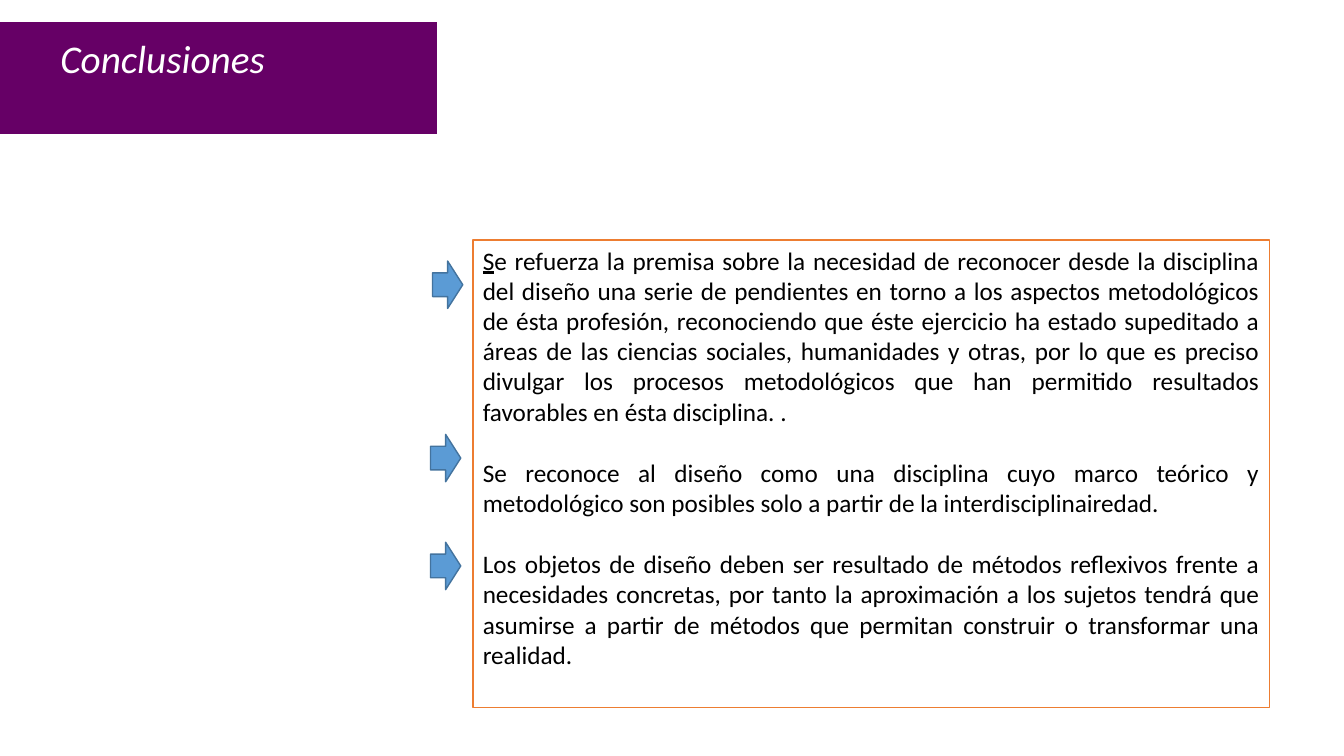
from pptx import Presentation
from pptx.dml.color import RGBColor
from pptx.enum.shapes import MSO_SHAPE
from pptx.enum.text import MSO_ANCHOR, PP_ALIGN
from pptx.util import Inches, Pt

COLORS = {
    "band": "660066", "white": "FFFFFF", "text": "000000",
    "frame": "ED7D31", "arrow": "5B9BD5", "edge": "43739E",
}
POINTS = [
    "Se refuerza la premisa sobre la necesidad de reconocer desde la disciplina del diseño una serie de pendientes en torno a los aspectos metodológicos de ésta profesión, reconociendo que éste ejercicio ha estado supeditado a áreas de las ciencias sociales, humanidades y otras, por lo que es preciso divulgar los procesos metodológicos que han permitido resultados favorables en ésta disciplina. .",
    "Se reconoce al diseño como una disciplina cuyo marco teórico y metodológico son posibles solo a partir de la interdisciplinairedad.",
    "Los objetos de diseño deben ser resultado de métodos reflexivos frente a necesidades concretas, por tanto la aproximación a los sujetos tendrá que asumirse a partir de métodos que permitan construir o transformar una realidad.",
]
ARROWS = [(-0.4, 0.21), (-0.42, 1.93), (-0.42, 3.0)]


def color(name):
    return RGBColor.from_string(COLORS[name])


def add_box(slide, kind, box, fill, line=None):
    shape = slide.shapes.add_shape(kind, *map(Inches, box))
    shape.shadow.inherit = False
    shape.fill.solid()
    shape.fill.fore_color.rgb = color(fill)
    if line:
        shape.line.color.rgb = color(line)
        shape.line.width = Pt(1)
    else:
        shape.line.fill.background()
    return shape


def set_font(para, size, ink):
    para.alignment = PP_ALIGN.JUSTIFY
    para.font.name = "Calibri"
    para.font.size = Pt(size)
    para.font.color.rgb = color(ink)


def add_title(slide, box, text):
    left, top, width, height = box
    add_box(slide, MSO_SHAPE.FLOWCHART_PROCESS, box, "band")
    label = slide.shapes.add_textbox(
        Inches(left + 0.5), Inches(top + 0.12), Inches(width - 1), Inches(0.53))
    frame = label.text_frame
    frame.word_wrap = True
    frame.vertical_anchor = MSO_ANCHOR.MIDDLE
    para = frame.paragraphs[0]
    para.text = text
    set_font(para, 28, "white")
    para.font.italic = True
    para.line_spacing = 0.9


def add_points(slide, box, points):
    left, top = box[:2]
    panel = add_box(slide, MSO_SHAPE.RECTANGLE, box, "white", "frame")
    frame = panel.text_frame
    frame.word_wrap = True
    frame.vertical_anchor = MSO_ANCHOR.TOP
    for index, text in enumerate(points):
        para = frame.add_paragraph() if index else frame.paragraphs[0]
        set_font(para, 18, "text")
        if index:
            para.space_before = Pt(22)
            para.add_run().text = text
        else:
            first = para.add_run()
            first.text = text[0]
            first.font.underline = True
            para.add_run().text = text[1:]
    for across, down in ARROWS:
        spot = (left + across, top + down, 0.3, 0.47)
        add_box(slide, MSO_SHAPE.RIGHT_ARROW, spot, "arrow", "edge")


def main():
    """Build the conclusions slide and save it."""
    deck = Presentation()
    deck.slide_width, deck.slide_height = Inches(13.33), Inches(7.5)
    slide = deck.slides.add_slide(deck.slide_layouts[6])
    add_title(slide, (0, 0.22, 4.33, 1.11), "Conclusiones")
    add_points(slide, (4.69, 2.38, 7.9, 4.64), POINTS)
    deck.save("out.pptx")


if __name__ == "__main__":
    main()
